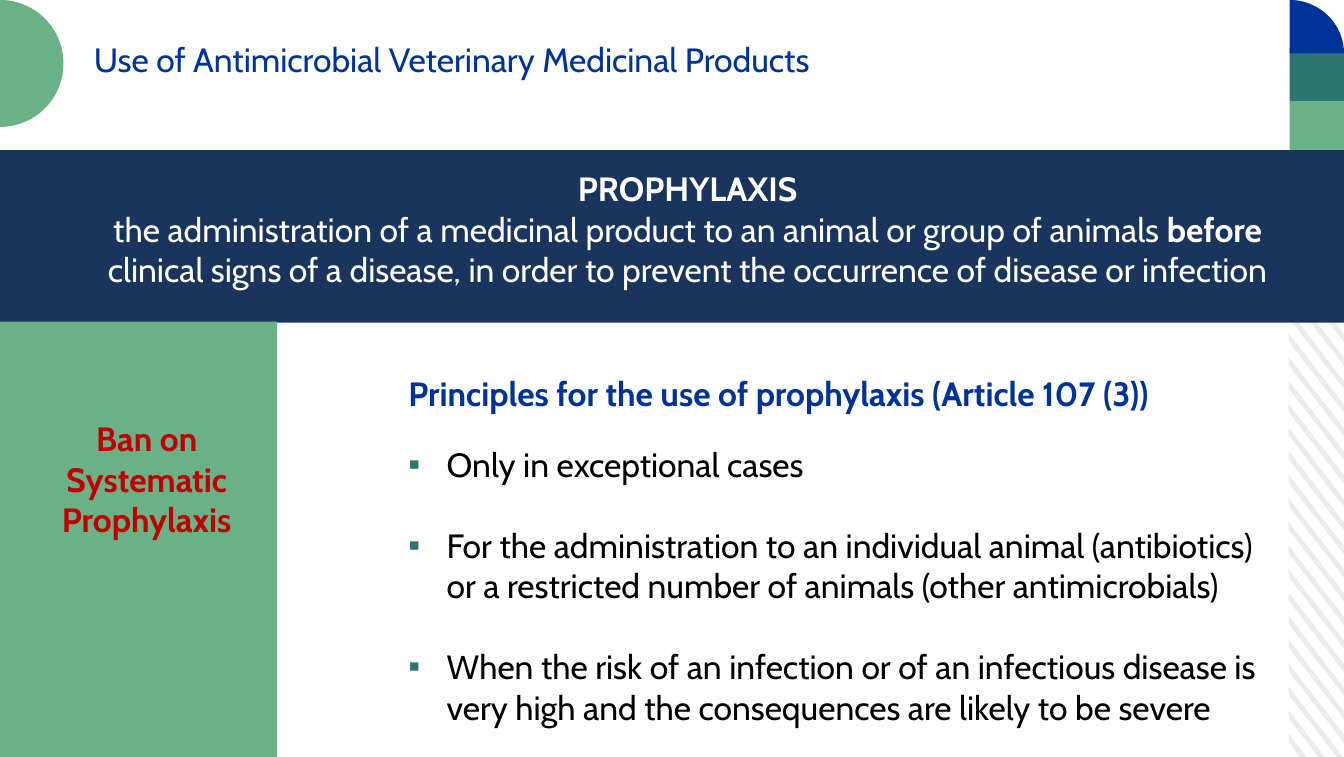
import math
from lxml import etree
from pptx import Presentation
from pptx.dml.color import RGBColor
from pptx.enum import shapes, text
from pptx.oxml import ns
from pptx.util import Inches, Pt

COLORS = {"blue": "003399", "navy": "19355D", "teal": "2C7470", "green": "6BB188",
          "stripe": "ECEBEB", "red": "C00000", "white": "FFFFFF", "black": "000000"}
LEFT, MID = text.PP_ALIGN.LEFT, text.PP_ALIGN.CENTER
FRAME = {"word_wrap": True, "auto_size": text.MSO_AUTO_SIZE.NONE,
         "vertical_anchor": text.MSO_ANCHOR.TOP}
RULES = ["Only in exceptional cases",
         "For the administration to an individual animal (antibiotics) "
         "or a restricted number of animals (other antimicrobials)",
         "When the risk of an infection or of an infectious disease is "
         "very high and the consequences are likely to be severe"]


def apply(item, vals):
    """Set each named value on the item."""
    for name, val in vals.items():
        setattr(item, name, val)


def place(shape, box):
    """Move a shape to a box given in inches."""
    apply(shape, dict(zip(("left", "top", "width", "height"), map(Inches, box))))


def paint(shape, color):
    """Give a shape a flat fill without line or shadow."""
    shape.shadow.inherit = False
    shape.fill.solid()
    shape.fill.fore_color.rgb = RGBColor.from_string(COLORS[color])
    shape.line.fill.background()


def block(slide, box, color):
    """Draw a plain rectangle."""
    kind = shapes.MSO_SHAPE.RECTANGLE
    paint(slide.shapes.add_shape(kind, *map(Inches, box)), color)


def outline(slide, loops, color):
    """Draw closed loops of points as one shape."""
    build = None
    for loop in loops:
        pts = [(Inches(x), Inches(y)) for x, y in loop]
        if build is None:
            build = slide.shapes.build_freeform(*pts[0], scale=1.0)
        else:
            build.move_to(*pts[0])
        build.add_line_segments(pts[1:], close=True)
    paint(build.convert_to_shape(), color)


def sector(slide, box, sweep, color):
    """Draw a circle sector that starts upright at the top left of its box."""
    x, y, wide, high = box
    mid = y + (high / 2 if sweep == 180 else high)
    arc = [math.radians(deg - 90) for deg in range(0, sweep + 1, 3)]
    pts = [(x + wide * math.cos(a), mid + (mid - y) * math.sin(a)) for a in arc]
    outline(slide, [[(x, mid)] + pts], color)


def stripes(slide, box):
    """Fill a box with slanted stripes cut off at its foot."""
    x, y, wide, high = box
    foot, rise, thick, step, count = y + high, 0.71, 0.08, 0.23, 22
    step = (foot - y - step) / (count - 1)
    loops = []
    for num in range(count):
        top = y + num * step
        low = top + thick
        cut, end = (min(1, (foot - edge) / rise) for edge in (top, low))
        loops.append([(x, top), (x + wide * cut, top + rise * cut),
                      (x + wide * end, low + rise * end), (x, low)])
    outline(slide, loops, "stripe")


def tower(slide, box):
    """Stack two squares under a quarter circle."""
    x, y, wide, high = box
    part = 0.53
    block(slide, (x, y + 0.48, wide, part), "teal")
    block(slide, (x, y + high - part, wide, part), "green")
    sector(slide, (x, y, wide, part), 90, "blue")


def write(para, runs, color, align):
    """Write runs of (words, bold) into a paragraph."""
    apply(para, {"alignment": align, "space_before": Pt(0), "space_after": Pt(0)})
    for words, bold in runs:
        run = para.add_run()
        run.text = words
        apply(run.font, {"name": "Cabin", "size": Pt(24), "bold": bold})
        run.font.color.rgb = RGBColor.from_string(COLORS[color])


def label(slide, box, lines, color):
    """Add a text box with centred lines."""
    frame = slide.shapes.add_textbox(*map(Inches, box)).text_frame
    apply(frame, FRAME)
    for num, runs in enumerate(lines):
        para = frame.add_paragraph() if num else frame.paragraphs[0]
        write(para, runs, color, MID)


def bullet(para, mark=None):
    """Set the bullet mark and hanging indent of a paragraph, or none."""
    props = para._p.get_or_add_pPr()
    gap = Inches(0.38) if mark else 0
    props.set("marL", str(gap))
    props.set("indent", str(-gap))
    if mark:
        tint = etree.SubElement(props, ns.qn("a:buClr"))
        etree.SubElement(tint, ns.qn("a:srgbClr"), val=COLORS["teal"])
        etree.SubElement(props, ns.qn("a:buChar"), char=mark)
    else:
        etree.SubElement(props, ns.qn("a:buNone"))


def header(slide, box):
    """Fill the title placeholder."""
    title = slide.shapes.title
    place(title, box)
    apply(title.text_frame, FRAME)
    words = "Use of Antimicrobial Veterinary Medicinal Products"
    write(title.text_frame.paragraphs[0], [(words, False)], "blue", LEFT)


def content(slide, box):
    """Fill the body placeholder with a heading and its rules."""
    body = slide.placeholders[1]
    place(body, box)
    frame = body.text_frame
    apply(frame, FRAME)
    head = frame.paragraphs[0]
    bullet(head)
    words = "Principles for the use of prophylaxis (Article 107 (3))"
    write(head, [(words, True)], "blue", LEFT)
    for num, rule in enumerate(RULES):
        para = frame.add_paragraph()
        bullet(para, "▪")
        write(para, [(rule, False)], "black", LEFT)
        para.space_before = Pt(29 if num else 22)


def banner(slide, box):
    """Draw the band with the definition."""
    x, y, wide, high = box
    block(slide, box, "navy")
    first = "the administration of a medicinal product to an animal or group of animals "
    last = "clinical signs of a disease, in order to prevent the occurrence of disease or infection"
    label(slide, (x + 0.57, y + 0.13, wide - 0.83, high - 0.13),
          [[("PROPHYLAXIS", True)],
           [(first, False), ("before ", True), (last, False)]], "white")


def panel(slide, box):
    """Draw the side panel with the ban."""
    x, y, wide, high = box
    block(slide, box, "green")
    label(slide, (x + 0.08, y + 0.91, wide, 1.3),
          [[("Ban on Systematic Prophylaxis", True)]], "red")


def main():
    """Build and save the slide."""
    deck = Presentation()
    apply(deck, {"slide_width": Inches(13.33), "slide_height": Inches(7.51)})
    slide = deck.slides.add_slide(deck.slide_layouts[1])
    stripes(slide, (12.78, 2.37, 0.55, 5.14))
    tower(slide, (12.79, 0, 0.54, 1.54))
    sector(slide, (0, 0, 0.63, 1.26), 180, "green")
    header(slide, (0.83, 0.34, 8.76, 0.58))
    content(slide, (3.95, 3.65, 8.7, 3.86))
    banner(slide, (0, 1.49, 13.33, 1.71))
    panel(slide, (0, 3.19, 2.75, 4.32))
    deck.save("out.pptx")


if __name__ == "__main__":
    main()
